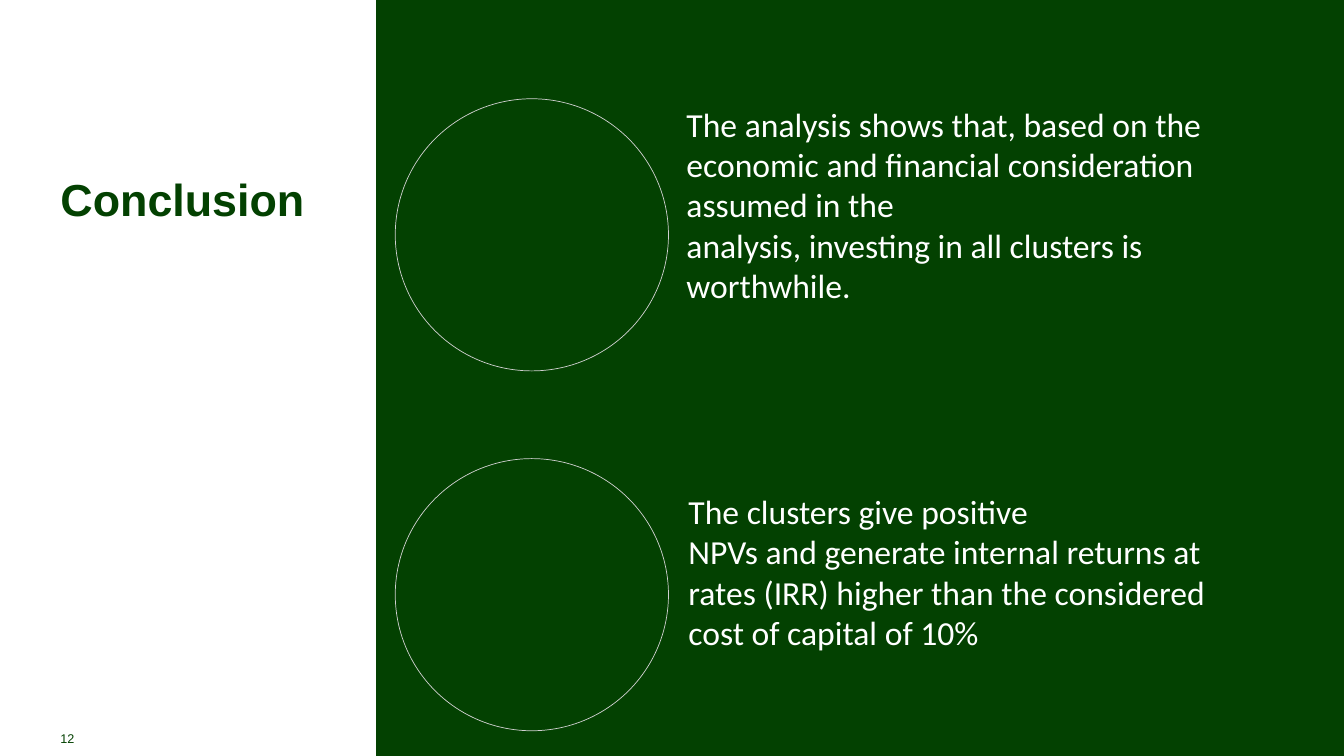
from pptx import Presentation
from pptx.dml.color import RGBColor
from pptx.enum.shapes import MSO_SHAPE as Shape
from pptx.util import Inches, Pt

GREEN = "034101"
WHITE = "FFFFFF"
GREY = "D0D0D0"


def color(hex_string):
    return RGBColor.from_string(hex_string)


def add_panel(slide, left, top, width, height):
    panel = slide.shapes.add_shape(
        Shape.RECTANGLE, Inches(left), Inches(top), Inches(width), Inches(height))
    panel.shadow.inherit = False
    panel.fill.solid()
    panel.fill.fore_color.rgb = color(GREEN)
    panel.line.fill.background()


def add_ring(slide, left, top, width, height):
    ring = slide.shapes.add_shape(
        Shape.OVAL, Inches(left), Inches(top), Inches(width), Inches(height))
    ring.shadow.inherit = False
    ring.fill.background()
    ring.line.color.rgb = color(GREY)
    ring.line.width = Pt(0.5)


def add_text(slide, box, paragraphs, size, font_name, text_color,
             bold=False, margins=(0.1, 0.05), indent=0):
    shape = slide.shapes.add_textbox(*[Inches(length) for length in box])
    frame = shape.text_frame
    frame.word_wrap = True
    frame.margin_left = frame.margin_right = Inches(margins[0])
    frame.margin_top = frame.margin_bottom = Inches(margins[1])
    for index, text in enumerate(paragraphs):
        paragraph = frame.add_paragraph() if index else frame.paragraphs[0]
        if indent:
            paragraph._p.get_or_add_pPr().set("marL", str(Inches(indent)))
        run = paragraph.add_run()
        run.text = text
        run.font.size = Pt(size)
        run.font.name = font_name
        run.font.bold = bold
        run.font.color.rgb = color(text_color)


def main():
    presentation = Presentation()
    presentation.slide_width = Inches(13.33)
    presentation.slide_height = Inches(7.5)
    slide = presentation.slides.add_slide(presentation.slide_layouts[6])

    # Green panel and title
    add_panel(slide, 3.73, 0, 9.6, 7.5)
    add_text(slide, (0.59, 1.7, 2.6, 0.55), ["Conclusion"], 32, "Arial", GREEN,
             bold=True, margins=(0, 0), indent=0.01)

    # Rings beside the two findings
    for top in (0.98, 4.55):
        add_ring(slide, 3.92, top, 2.71, 2.7)

    # Findings
    findings = [
        ((6.71, 0.98, 5.91, 2.12),
         ["The analysis shows that, based on the economic and financial "
          "consideration assumed in the",
          "analysis, investing in all clusters is worthwhile."]),
        ((6.73, 4.82, 5.46, 1.72),
         ["The clusters give positive",
          "NPVs and generate internal returns at rates (IRR) higher than "
          "the considered cost of capital of 10%"]),
    ]
    for box, paragraphs in findings:
        add_text(slide, box, paragraphs, 24, "Calibri", WHITE)

    # Slide number
    add_text(slide, (0.56, 7.25, 0.22, 0.17), ["12"], 9, "Arial", GREEN,
             margins=(0, 0), indent=0.04)

    presentation.save("out.pptx")


if __name__ == "__main__":
    main()
